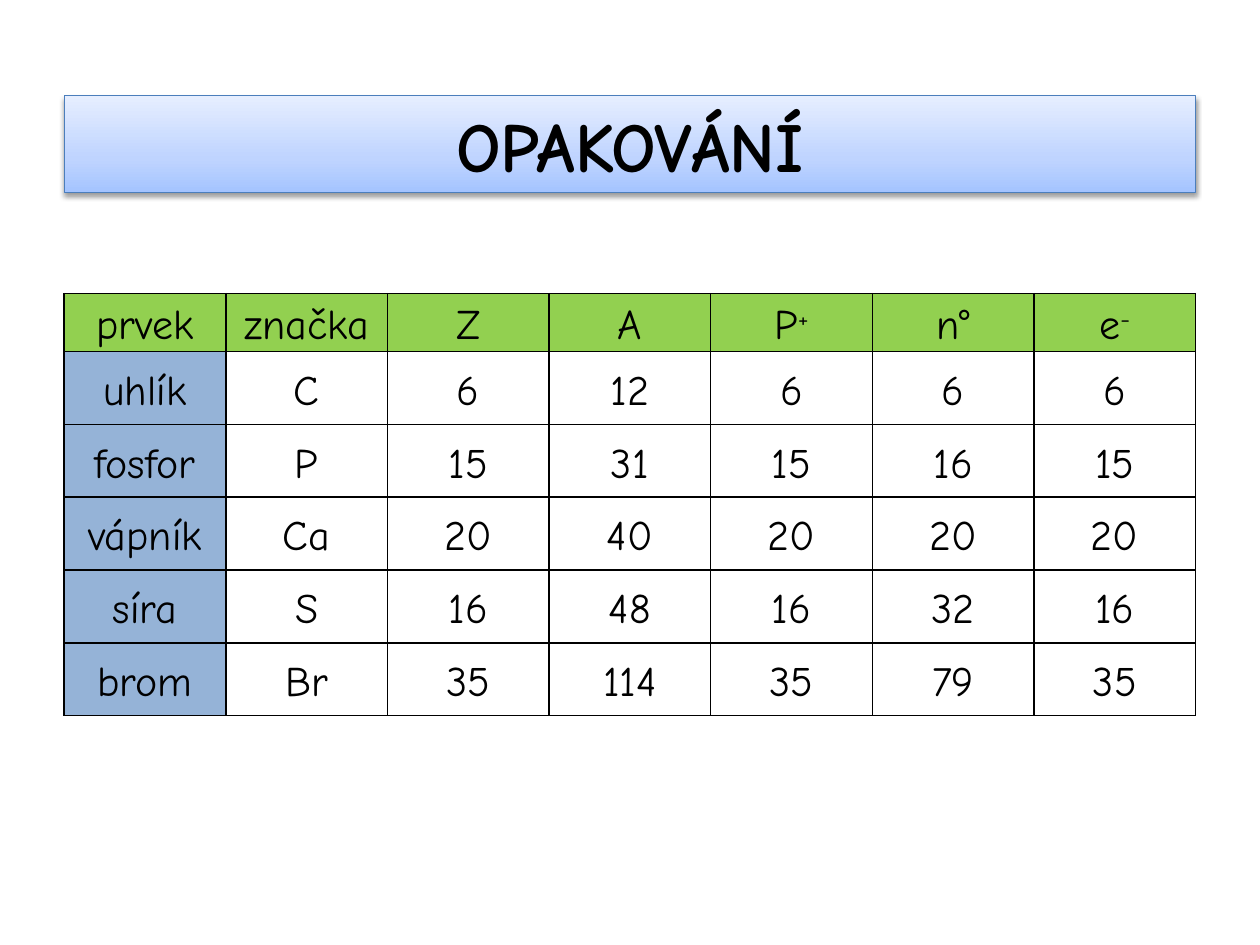
import copy
import pptx
import pptx.util
import pptx.dml.color
import pptx.enum.shapes
import pptx.enum.text
import pptx.oxml
import pptx.oxml.ns

Inches = pptx.util.Inches
Pt = pptx.util.Pt
FONT = "Comic Neue"
NS = pptx.oxml.ns.nsdecls("a")
ROWS = [
    ["prvek", "značka", "Z", "A", "P^+", "n°", "e^-"],
    ["uhlík", "C", "6", "12", "6", "6", "6"],
    ["fosfor", "P", "15", "31", "15", "16", "15"],
    ["vápník", "Ca", "20", "40", "20", "20", "20"],
    ["síra", "S", "16", "48", "16", "32", "16"],
    ["brom", "Br", "35", "114", "35", "79", "35"],
]


def color(code):
    return pptx.dml.color.RGBColor.from_string(code)


def style(run, size, bold=False):
    run.font.name = FONT
    run.font.size = Pt(size)
    run.font.bold = bold
    run.font.color.rgb = color("000000")


def shade(shape):
    shape.shadow.inherit = False
    effects = shape.element.spPr.find(pptx.oxml.ns.qn("a:effectLst"))
    effects.append(pptx.oxml.parse_xml(
        f'<a:outerShdw {NS} blurRad="{Pt(3.1)}" dist="{Pt(1.6)}" dir="5400000" '
        'rotWithShape="0"><a:srgbClr val="000000"><a:alpha val="38000"/>'
        '</a:srgbClr></a:outerShdw>'))


def title(slide, left, top, width, height):
    bar = slide.shapes.add_shape(
        pptx.enum.shapes.MSO_SHAPE.RECTANGLE, left, top, width, height)
    bar.fill.gradient()
    bar.fill.gradient_angle = 90
    stops = bar.element.xpath(".//a:gsLst")[0]
    stops.append(copy.deepcopy(stops[0]))
    tones = [(0, "A4C4FF"), (0.35, "BFD4FF"), (1, "E6EEFF")]
    for stop, (place, code) in zip(bar.fill.gradient_stops, tones):
        stop.position = place
        stop.color.rgb = color(code)
    bar.line.color.rgb = color("4B7EBC")
    bar.line.width = Pt(0.75)
    shade(bar)
    frame = bar.text_frame
    frame.word_wrap = True
    frame.vertical_anchor = pptx.enum.text.MSO_ANCHOR.MIDDLE
    frame.text = "OPAKOVÁNÍ"
    para = frame.paragraphs[0]
    para.alignment = pptx.enum.text.PP_ALIGN.CENTER
    style(para.runs[0], 40, True)


def border(cell):
    props = cell._tc.get_or_add_tcPr()
    for side in "LRTB":
        props.append(pptx.oxml.parse_xml(
            f'<a:ln{side} {NS} w="{Pt(1)}"><a:solidFill><a:srgbClr val="000000"/>'
            f'</a:solidFill></a:ln{side}>'))


def write(cell, text, fill):
    cell.margin_left = cell.margin_right = Inches(0.07)
    cell.margin_top = cell.margin_bottom = 0
    cell.vertical_anchor = pptx.enum.text.MSO_ANCHOR.MIDDLE
    border(cell)
    if fill:
        cell.fill.solid()
        cell.fill.fore_color.rgb = color(fill)
    else:
        cell.fill.background()
    base, mark, sup = text.partition("^")
    cell.text_frame.text = base
    para = cell.text_frame.paragraphs[0]
    para.alignment = pptx.enum.text.PP_ALIGN.CENTER
    para.line_spacing = 1.15
    if mark:
        run = para.add_run()
        run.text = sup
        run._r.get_or_add_rPr().set("baseline", "30000")
    for run in para.runs:
        style(run, 24)


def grid(slide, left, top, width, height):
    head = Inches(0.46)
    table = slide.shapes.add_table(
        len(ROWS), len(ROWS[0]), left, top, width, height).table
    table.first_row = table.horz_banding = False
    for col in table.columns:
        col.width = width // len(ROWS[0])
    for i, row in enumerate(ROWS):
        table.rows[i].height = (height - head) // (len(ROWS) - 1) if i else head
        for j, text in enumerate(row):
            fill = "92D050" if i == 0 else "95B3D7" if j == 0 else None
            write(table.cell(i, j), text, fill)


def main():
    deck = pptx.Presentation()
    deck.slide_width = Inches(10)
    deck.slide_height = Inches(7.5)
    slide = deck.slides.add_slide(deck.slide_layouts[6])
    left, width = Inches(0.51), Inches(8.98)
    grid(slide, left, Inches(2.33), width, Inches(3.35))
    title(slide, left, Inches(0.76), width, Inches(0.77))
    deck.save("out.pptx")


if __name__ == "__main__":
    main()
